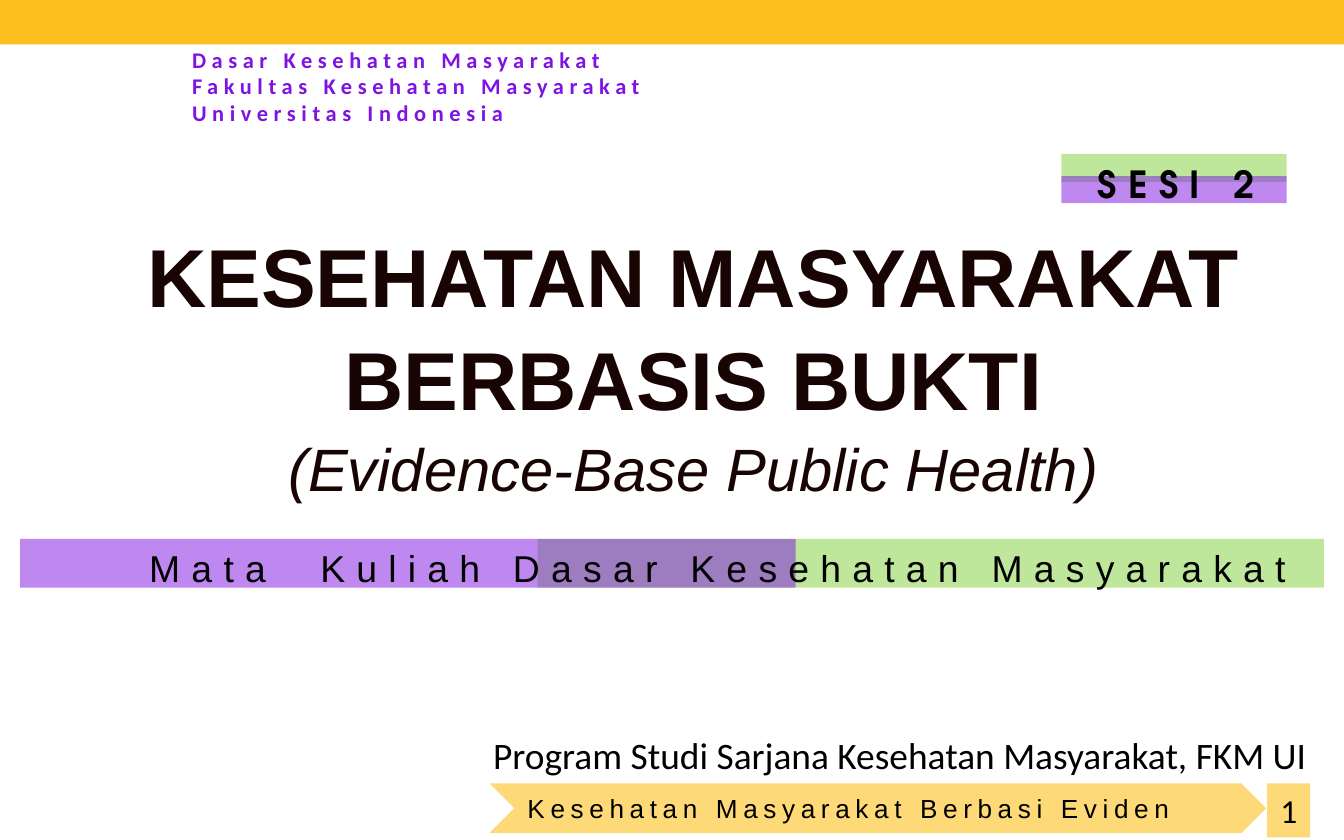
from lxml.etree import SubElement
from pptx import Presentation
from pptx.dml.color import RGBColor
from pptx.enum.shapes import MSO_SHAPE
from pptx.enum.text import MSO_ANCHOR, MSO_AUTO_SIZE, PP_ALIGN
from pptx.oxml.ns import qn
from pptx.util import Cm, Pt

YELLOW, PALE_YELLOW = "FBC01E", "FDD978"
PURPLE, GREEN = "7E13E3", "7FD13B"
BLACK, DARK = "000000", "190404"


def color(hex_code):
    return RGBColor.from_string(hex_code)


class Deck:
    """Holds the text style and the current slide."""

    font, size, ink = "Calibri", 20, BLACK

    def __init__(self, width, height):
        self.file = Presentation()
        self.file.slide_width, self.file.slide_height = Cm(width), Cm(height)
        self.slide = self.file.slides.add_slide(self.file.slide_layouts[6])

    def shape(self, box, fill, kind=MSO_SHAPE.RECTANGLE, opacity=100):
        item = self.slide.shapes.add_shape(kind, *map(Cm, box))
        item.shadow.inherit = False
        item.line.fill.background()
        item.fill.solid()
        item.fill.fore_color.rgb = color(fill)
        if opacity < 100:
            solid = item.element.spPr.find(qn("a:solidFill"))
            SubElement(solid[0], qn("a:alpha")).set("val", str(opacity * 1000))
        return item

    def text(self, box, lines, wrap=False, **style):
        item = self.slide.shapes.add_textbox(*map(Cm, box))
        item.text_frame.word_wrap = wrap
        if not wrap:
            item.text_frame.auto_size = MSO_AUTO_SIZE.SHAPE_TO_FIT_TEXT
        self.add_lines(item, lines, **style)
        return item

    def add_lines(self, item, lines, align=PP_ALIGN.LEFT, spacing=0, font=None,
                  size=None, ink=None, bold=False):
        frame = item.text_frame
        for number, line in enumerate(lines):
            paragraph = frame.add_paragraph() if number else frame.paragraphs[0]
            paragraph.alignment = align
            run = paragraph.add_run()
            run.text = line
            run.font.name = font or self.font
            run.font.size = Pt(size or self.size)
            run.font.color.rgb = color(ink or self.ink)
            run.font.bold = bold
            if spacing:
                run._r.get_or_add_rPr().set("spc", str(spacing * 100))


def main():
    deck = Deck(25.4, 15.88)

    # Top band and institution
    deck.shape((0, 0, 25.4, 0.84), YELLOW)
    deck.text((3.38, 0.74, 9.22, 1.8),
              ["Dasar Kesehatan Masyarakat", "Fakultas Kesehatan Masyarakat",
               "Universitas Indonesia"],
              size=12, ink=PURPLE, bold=True, spacing=3)

    # Study programme
    deck.text((8.64, 13.72, 16.31, 1.12),
              ["Program Studi Sarjana Kesehatan Masyarakat, FKM UI"],
              align=PP_ALIGN.RIGHT)

    # Course strip
    deck.shape((10.16, 10.19, 14.86, 0.92), GREEN, opacity=50)
    deck.shape((0.38, 10.19, 14.66, 0.92), PURPLE, opacity=50)
    deck.text((2.57, 10.19, 22.38, 1.12),
              ["Mata  Kuliah Dasar Kesehatan Masyarakat"],
              font="Arial", spacing=6)

    # Session label
    deck.shape((20.06, 2.91, 4.26, 0.53), GREEN, opacity=50)
    deck.shape((20.06, 3.33, 4.26, 0.51), PURPLE, opacity=50)
    deck.text((20.37, 2.92, 3.71, 1.12), ["SESI 2"], align=PP_ALIGN.CENTER,
              font="TeX Gyre Adventor", bold=True, spacing=6)

    # Title, with the English term smaller and in italics
    title = deck.text((1.78, 3.99, 22.66, 5.56),
                      ["KESEHATAN MASYARAKAT", "BERBASIS BUKTI",
                       "(Evidence-Base Public Health)"],
                      wrap=True, align=PP_ALIGN.CENTER, font="Arial", size=44,
                      ink=DARK, bold=True)
    title.text_frame.margin_top = Cm(0.28)
    for paragraph in title.text_frame.paragraphs[1:]:
        paragraph.space_before = Pt(2.3)
    term = title.text_frame.paragraphs[-1].runs[0].font
    term.size, term.bold, term.italic = Pt(32), False, True

    # Footer: page number and topic
    page = deck.shape((23.95, 14.81, 0.81, 1.02), PALE_YELLOW)
    page.text_frame.vertical_anchor = MSO_ANCHOR.TOP
    page.text_frame.word_wrap = False
    deck.add_lines(page, ["1"], size=18)
    topic = deck.shape((9.25, 14.81, 14.68, 0.94), PALE_YELLOW, MSO_SHAPE.CHEVRON)
    topic.text_frame.vertical_anchor = MSO_ANCHOR.MIDDLE
    deck.add_lines(topic, ["Kesehatan Masyarakat Berbasi Eviden"],
                   align=PP_ALIGN.JUSTIFY, font="Arial", size=14, spacing=3)

    deck.file.save("out.pptx")


if __name__ == "__main__":
    main()
